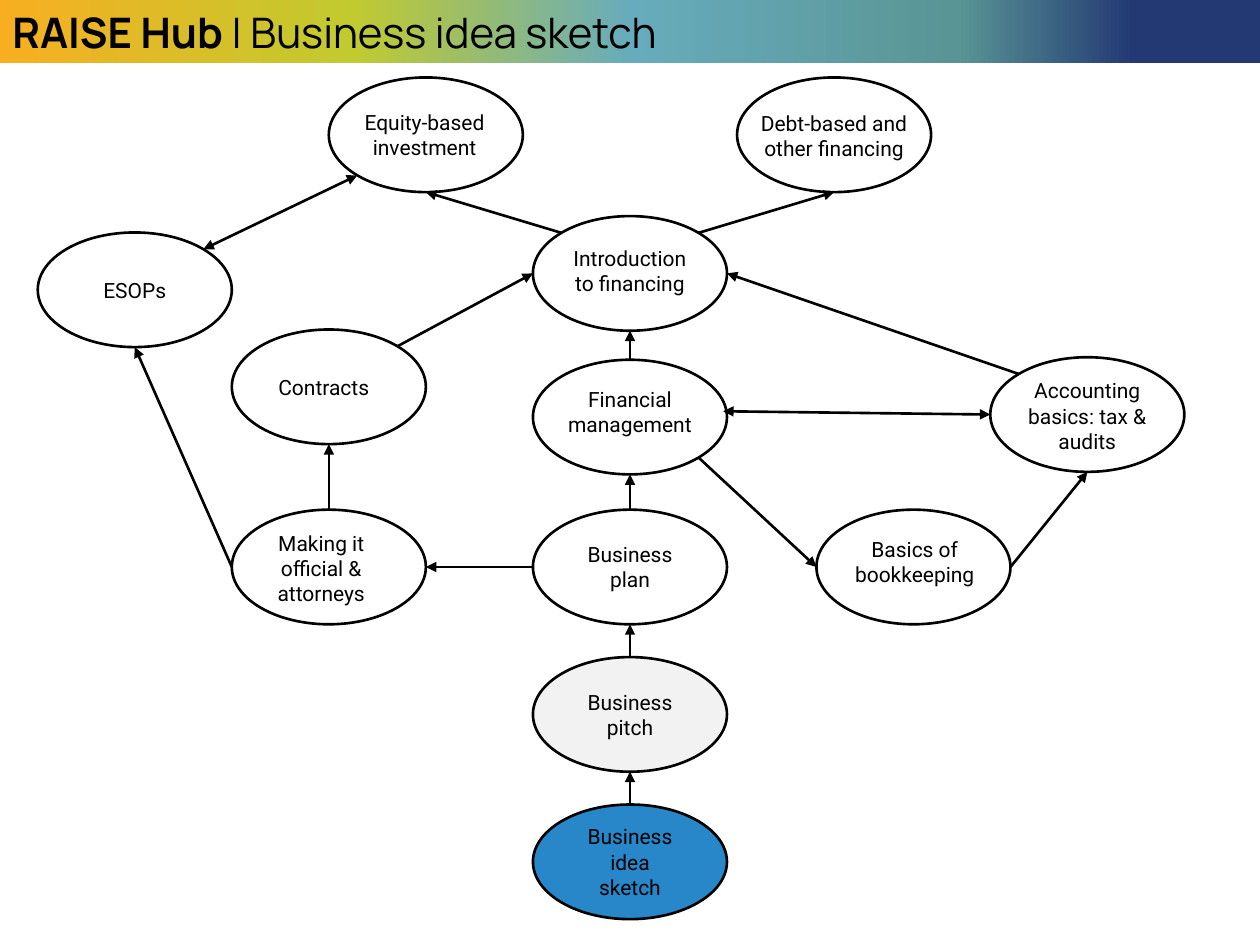
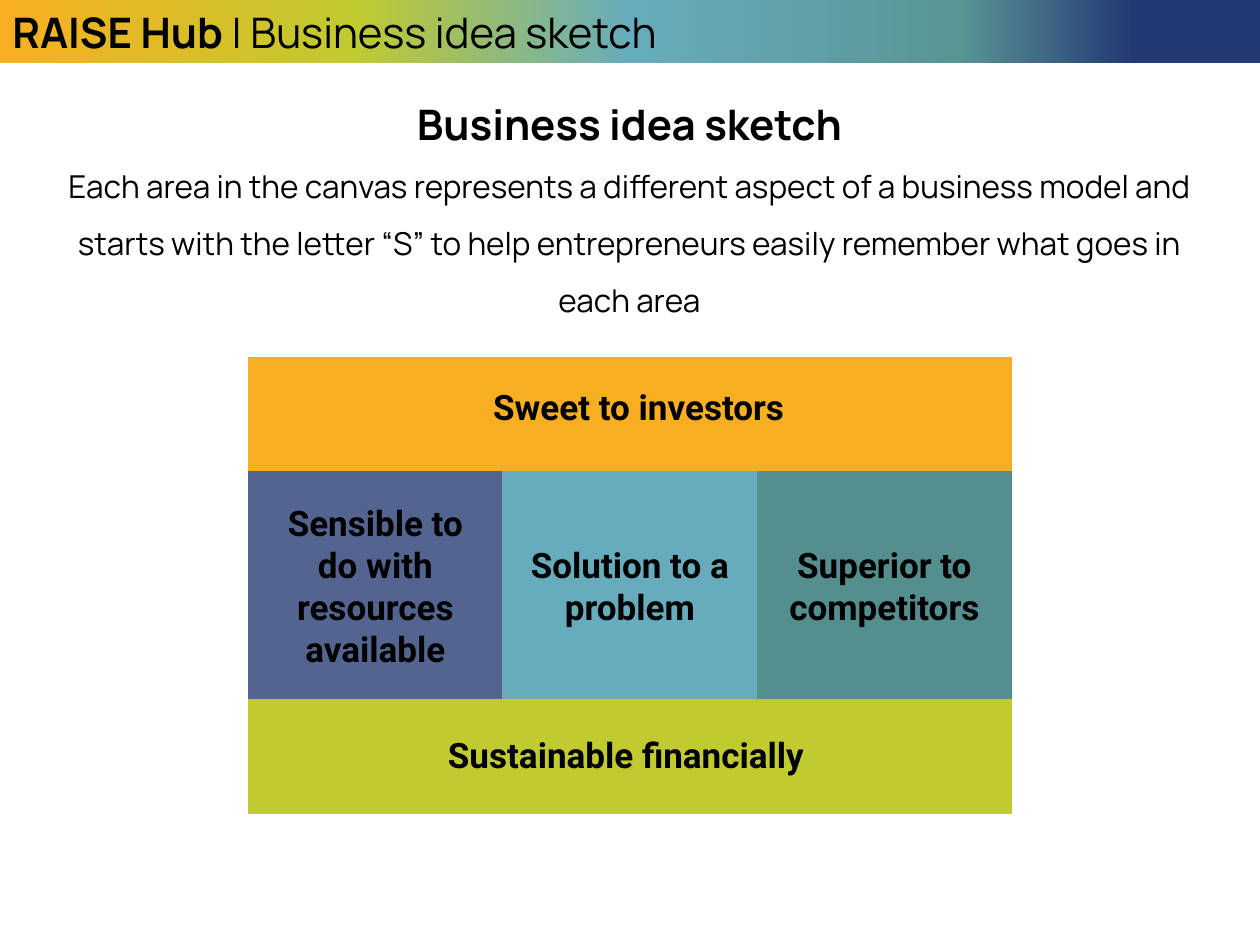
from lxml import etree
from pptx import Presentation
from pptx.dml.color import RGBColor
from pptx.enum.shapes import MSO_CONNECTOR, MSO_SHAPE
from pptx.enum.text import MSO_ANCHOR, MSO_AUTO_SIZE as AUTO, PP_ALIGN as ALIGN
from pptx.oxml.ns import qn
from pptx.util import Inches, Pt

W, H = 10, 7.5
COLORS = {
    "ink": "000000", "white": "FFFFFF", "gray": "F2F2F2", "blue": "2787C8",
    "orange": "F7AF21", "lime": "C1CA2F", "sky": "67ACBC",
    "sea": "599595", "teal": "558E8E", "navy": "233973",
}
BAND_STOPS = [(0, "orange"), (28, "lime"), (50, "sky"), (76, "sea"), (90, "navy")]
TITLE_FONT, BODY_FONT = "Manrope", "Roboto"
NO_GRID_STYLE = "{2D5ABB26-0587-4C30-8999-92F81FD0307C}"

# Ellipse size, and the points on its outline in units of its radii
NODE_W, NODE_H = 1.54, 0.91
D = 0.5 ** 0.5
SIDES = {
    "N": (0, -1), "S": (0, 1), "W": (-1, 0), "E": (1, 0),
    "NE": (D, -D), "NW": (-D, -D), "SE": (D, D), "SW": (-D, D),
    "E label": (0.96, -0.1),
}

# key: (centre x, centre y, fill, text, lines, label width, label shift x, y)
MID = W / 2
PLAN_Y, STEP = 4.5, 1.17
NODES = {
    "idea": (MID, PLAN_Y + 2 * STEP, "blue", "Business idea sketch", 3, 0.99, 0, 0),
    "pitch": (MID, PLAN_Y + STEP, "gray", "Business pitch", 2, 0.99, 0, 0),
    "plan": (MID, PLAN_Y, None, "Business plan", 2, 0.99, 0, 0),
    "finance": (MID, 3.31, "white", "Financial management", 2, 1.48, 0, -0.04),
    "intro": (MID, 2.17, None, "Introduction to financing", 2, 1.27, 0, -0.02),
    "books": (7.25, PLAN_Y, None, "Basics of bookkeeping", 2, 1.34, 0.01, -0.04),
    "official": (2.61, PLAN_Y, None, "Making it official & attorneys", 3, 1.1, -0.06, 0.01),
    "accounts": (8.63, 3.29, None, "Accounting basics: tax & audits", 3, 1.27, 0, 0.01),
    "contracts": (2.61, 3.07, None, "Contracts", 1, 1.26, -0.04, 0),
    "equity": (3.38, 1.07, None, "Equity-based\ninvestment", 2, 1.4, -0.01, 0),
    "debt": (6.62, 1.07, None, "Debt-based and other financing", 2, 1.4, 0, 0.01),
    "esops": (1.07, 2.3, None, "ESOPs", 1, 1.26, 0, 0),
}
# (from node, side, to node, side, arrowheads at both ends)
ARROWS = [
    ("idea", "N", "pitch", "S", False),
    ("pitch", "N", "plan", "S", False),
    ("plan", "N", "finance", "S", False),
    ("finance", "N", "intro", "S", False),
    ("intro", "NE", "debt", "S", False),
    ("intro", "NW", "equity", "S", False),
    ("plan", "W", "official", "E", False),
    ("finance", "SE", "books", "W", False),
    ("books", "E", "accounts", "S", False),
    ("official", "N", "contracts", "S", False),
    ("official", "W", "esops", "S", False),
    ("contracts", "NE", "intro", "W", False),
    ("accounts", "NW", "intro", "E", False),
    ("accounts", "W", "finance", "E label", True),
    ("equity", "SW", "esops", "NE", True),
]

COL_W, ROWS = 2.02, [0.91, 1.81, 0.91]
TABLE_X, TABLE_Y = 1.97, 2.83
# (row, column, columns spanned, fill, opacity %, text, lines, label width, shift x, y)
CANVAS = [
    (0, 0, 3, "orange", 100, "Sweet to investors", 1, 2.73, 0.07, -0.06),
    (1, 0, 1, "navy", 78, "Sensible to do with resources available", 4, 1.84, 0, 0),
    (1, 1, 1, "sky", 100, "Solution to a problem", 2, 1.84, 0, 0),
    (1, 2, 1, "teal", 100, "Superior to competitors", 2, 1.84, 0, 0),
    (2, 0, 3, "lime", 100, "Sustainable financially", 1, 3.29, -0.03, -0.02),
]


def rgb(name):
    return RGBColor.from_string(COLORS[name])


def box(x, y, w, h):
    return [Inches(v) for v in (x, y, w, h)]


def style_run(r, size, font, bold=False):
    r.font.size, r.font.name, r.font.bold = Pt(size), font, bold
    r.font.color.rgb = rgb("ink")


def add_text(slide, x, y, w, h):
    tf = slide.shapes.add_textbox(*box(x, y, w, h)).text_frame
    tf.word_wrap = True
    tf.auto_size = AUTO.SHAPE_TO_FIT_TEXT
    return tf


def add_label(slide, cx, cy, width, text, lines, size, bold=False):
    """Centred text whose box is as high as its number of lines."""
    h = 0.1 + lines * size * 1.2 / 72
    tf = add_text(slide, cx - width / 2, cy - h / 2, width, h)
    tf.text = text
    for p in tf.paragraphs:
        p.alignment = ALIGN.CENTER
        for r in p.runs:
            style_run(r, size, BODY_FONT, bold)


def add_band(slide):
    """Gradient title band along the top edge."""
    sp = slide.shapes.add_shape(MSO_SHAPE.RECTANGLE, *box(0, 0, W, H / 15))
    sp.shadow.inherit = False
    sp.line.fill.background()
    sp.fill.gradient()
    sp.fill.gradient_angle = 0
    stops = next(sp._element.spPr.iter(qn("a:gsLst")))
    for stop in list(stops):
        stops.remove(stop)
    for share, name in BAND_STOPS:
        stop = etree.SubElement(stops, qn("a:gs"), pos=str(share * 1000))
        etree.SubElement(stop, qn("a:srgbClr"), val=COLORS[name])
    tf = sp.text_frame
    tf.word_wrap = True
    tf.auto_size = AUTO.SHAPE_TO_FIT_TEXT
    tf.vertical_anchor = MSO_ANCHOR.MIDDLE
    p = tf.paragraphs[0]
    p.alignment = ALIGN.LEFT
    for text, bold in (("RAISE Hub ", True), ("| Business idea sketch", False)):
        r = p.add_run()
        r.text = text
        style_run(r, 24, TITLE_FONT, bold)


def add_node(slide, cx, cy, fill, text, lines, width, dx, dy):
    sp = slide.shapes.add_shape(
        MSO_SHAPE.OVAL, *box(cx - NODE_W / 2, cy - NODE_H / 2, NODE_W, NODE_H))
    sp.shadow.inherit = False
    if fill:
        sp.fill.solid()
        sp.fill.fore_color.rgb = rgb(fill)
    else:
        sp.fill.background()
    sp.line.color.rgb, sp.line.width = rgb("ink"), Pt(1.5)
    add_label(slide, cx + dx, cy + dy, width, text, lines, 12)


def outline_point(node, side):
    cx, cy = NODES[node][:2]
    ux, uy = SIDES[side]
    return Inches(cx + ux * NODE_W / 2), Inches(cy + uy * NODE_H / 2)


def add_arrow(slide, start, start_side, end, end_side, both):
    line = slide.shapes.add_connector(
        MSO_CONNECTOR.STRAIGHT,
        *outline_point(start, start_side), *outline_point(end, end_side))
    line.line.color.rgb, line.line.width = rgb("ink"), Pt(1.5)
    ln = line.line._get_or_add_ln()
    for tag in ("a:headEnd", "a:tailEnd") if both else ("a:tailEnd",):
        etree.SubElement(ln, qn(tag), type="triangle")
    etree.SubElement(line._element.spPr, qn("a:effectLst"))


def add_intro(slide, heading, body):
    tf = add_text(slide, 0.29, 0.53, 9.41, 2.03)
    tf.text = f"{heading}\n{body}"
    for p, size, bold in zip(tf.paragraphs, (24, 18), (True, False)):
        p.alignment, p.line_spacing = ALIGN.CENTER, 1.5
        style_run(p.runs[0], size, TITLE_FONT, bold)


def add_canvas(slide):
    """Table of coloured areas with a label over each."""
    frame = slide.shapes.add_table(
        3, 3, *box(TABLE_X, TABLE_Y, 3 * COL_W, sum(ROWS)))
    table = frame.table
    next(frame._element.iter(qn("a:tableStyleId"))).text = NO_GRID_STYLE
    table.first_row = table.horz_banding = False
    for col in table.columns:
        col.width = Inches(COL_W)
    for row, height in zip(table.rows, ROWS):
        row.height = Inches(height)
    for row, col, span, fill, opacity, text, lines, width, dx, dy in CANVAS:
        cell = table.cell(row, col)
        if span > 1:
            cell.merge(table.cell(row, col + span - 1))
        cell.fill.solid()
        cell.fill.fore_color.rgb = rgb(fill)
        if opacity < 100:
            color = next(cell._tc.iter(qn("a:srgbClr")))
            etree.SubElement(color, qn("a:alpha"), val=str(opacity * 1000))
        cx = TABLE_X + (col + span / 2) * COL_W
        cy = TABLE_Y + sum(ROWS[:row]) + ROWS[row] / 2
        add_label(slide, cx + dx, cy + dy, width, text, lines, 20, True)


def add_slide(prs):
    slide = prs.slides.add_slide(prs.slide_layouts[6])
    add_band(slide)
    return slide


def main():
    prs = Presentation()
    prs.slide_width, prs.slide_height = Inches(W), Inches(H)

    roadmap = add_slide(prs)
    for node in NODES.values():
        add_node(roadmap, *node)
    for arrow in ARROWS:
        add_arrow(roadmap, *arrow)

    sketch = add_slide(prs)
    add_intro(
        sketch, "Business idea sketch",
        "Each area in the canvas represents a different aspect of a business "
        "model and starts with the letter “S” to help entrepreneurs easily "
        "remember what goes in each area")
    add_canvas(sketch)
    prs.save("out.pptx")


if __name__ == "__main__":
    main()
